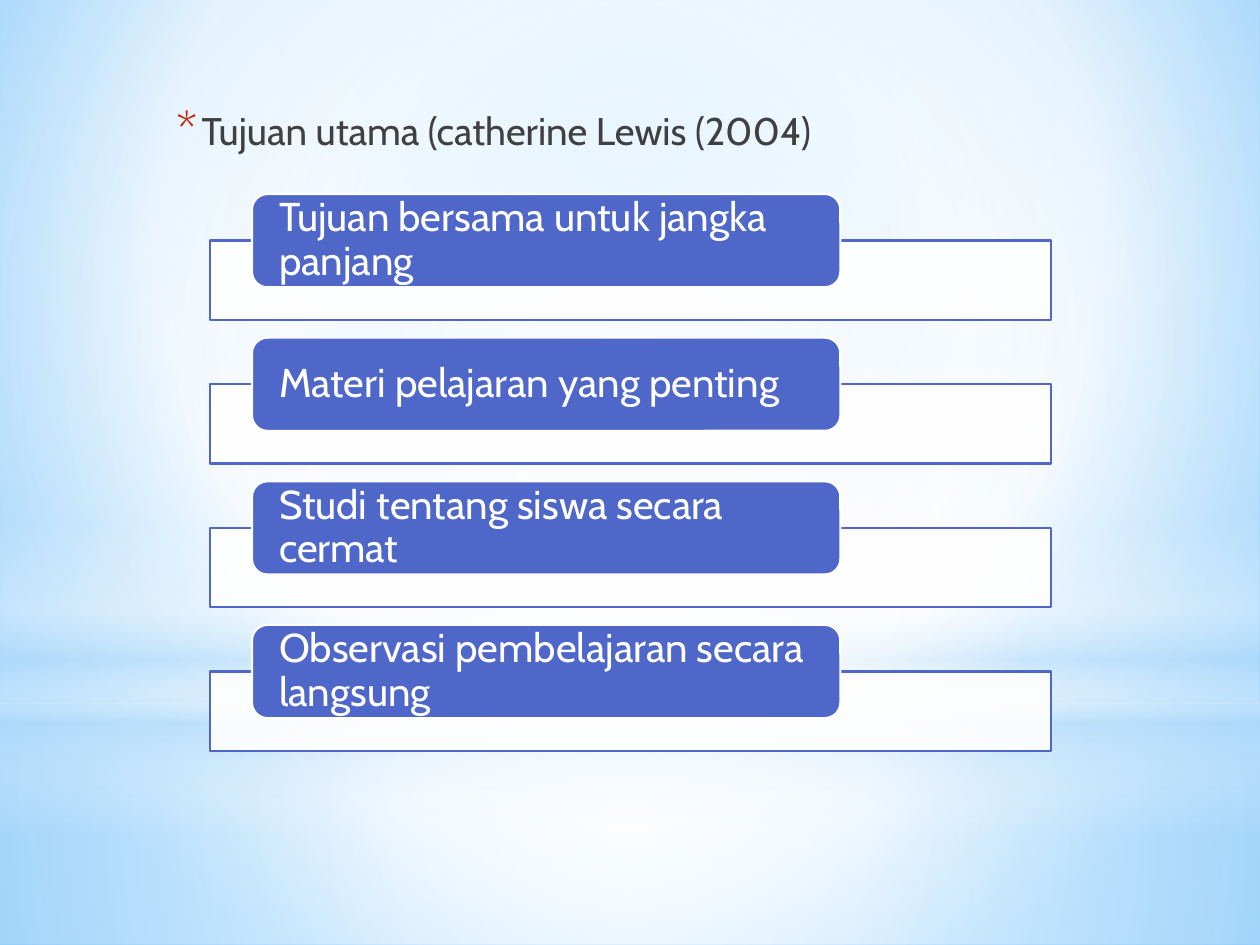
"""Build a slide that lists the main goals as four labelled bars."""
from lxml.etree import SubElement
from pptx import Presentation
from pptx.dml.color import RGBColor
from pptx.enum.shapes import MSO_SHAPE as SHAPE
from pptx.enum.text import MSO_ANCHOR as ANCHOR, MSO_AUTO_SIZE as AUTO, PP_ALIGN as ALIGN
from pptx.oxml.ns import qn
from pptx.util import Inches, Pt

HEADING = "Tujuan utama (catherine Lewis (2004)"
GOALS = [
    "Tujuan bersama untuk jangka panjang",
    "Materi pelajaran yang penting",
    "Studi tentang siswa secara cermat",
    "Observasi pembelajaran secara langsung",
]
THEME = dict(font="Cabin", heading="404040", bullet="C3260C", accent="4E67C8",
             white="FFFFFF", sky="B4DCFA", heading_size=22, goal_size=23, line=1.25)
WHITE, SKY = THEME["white"], THEME["sky"]
CENTER = (50, 50, 50, 50)
BACKDROP = [(0, "9ED5FF", 100), (60, WHITE, 100), (100, "5BB9FF", 100)]
BACKDROP_FOCUS = (20, 10, 20, 60)
GLOWS = [
    (SHAPE.RECTANGLE, (0, 5.58, 10, 1.92), CENTER,
     [(0, WHITE, 91), (37, WHITE, 76), (100, SKY, 79)]),
    (SHAPE.RECTANGLE, (0, 0, 10, 5.58), CENTER,
     [(0, WHITE, 89), (48, WHITE, 62), (100, SKY, 79)]),
    (SHAPE.RECTANGLE, (0, 4.12, 10, 2.5), None,
     [(0, WHITE, 0), (29, WHITE, 30), (45, SKY, 40), (55, WHITE, 26),
      (65, SKY, 60), (100, WHITE, 0)]),
    (SHAPE.OVAL, (0, 1.75, 10, 5.58), CENTER, [(0, WHITE, 100), (56, WHITE, 0)]),
]
HEADING_BOX = (1.25, 0.8, 7, 0.98)
BAR = (1.67, 1.91, 6.67, 0.63)
LABEL = (2, 1.54, 4.67, 0.74)
PITCH = 1.14


def add_xml(parent, tag, **attrs):
    return SubElement(parent, qn(tag), {k: str(v) for k, v in attrs.items()})


def set_gradient(fill, owner, stops, focus):
    fill.gradient()
    grad = owner.find(".//" + qn("a:gradFill"))
    grad.clear()
    grad.set("rotWithShape", "1")
    stop_list = add_xml(grad, "a:gsLst")
    for pos, color, alpha in stops:
        stop = add_xml(stop_list, "a:gs", pos=pos * 1000)
        clr = add_xml(stop, "a:srgbClr", val=color)
        if alpha < 100:
            add_xml(clr, "a:alpha", val=alpha * 1000)
    if focus:
        path = add_xml(grad, "a:path", path="circle")
        add_xml(path, "a:fillToRect", **{k: v * 1000 for k, v in zip("ltrb", focus)})
    else:
        add_xml(grad, "a:lin", ang=90 * 60000, scaled=0)


def add_box(s, kind, box, fill=None, line=None):
    sp = s.shapes.add_shape(kind, *map(Inches, box))
    sp.shadow.inherit = False
    if fill:
        sp.fill.solid()
        sp.fill.fore_color.rgb = RGBColor.from_string(fill)
    if line:
        sp.line.color.rgb = RGBColor.from_string(line)
        sp.line.width = Pt(THEME["line"])
    else:
        sp.line.fill.background()
    return sp


def write(tf, text, size, color):
    tf.text = text
    tf.word_wrap = True
    p = tf.paragraphs[0]
    p.alignment = ALIGN.LEFT
    font = p.runs[0].font
    font.name, font.size = THEME["font"], Pt(size)
    font.color.rgb = RGBColor.from_string(color)
    return p


def add_heading(s):
    body = s.placeholders[1]
    body.left, body.top, body.width, body.height = map(Inches, HEADING_BOX)
    s.shapes.element.append(body.element)
    body.text_frame.auto_size = AUTO.NONE
    p = write(body.text_frame, HEADING, THEME["heading_size"], THEME["heading"])
    p.space_before, p.space_after = Pt(4.4), Pt(3)
    pPr = p.runs[0].font and p.runs[0]._r.getparent().get_or_add_pPr()
    pPr.set("marL", str(Inches(0.25)))
    pPr.set("indent", str(Inches(-0.2)))
    add_xml(add_xml(pPr, "a:buClr"), "a:srgbClr", val=THEME["bullet"])
    add_xml(pPr, "a:buSzPct", val=130000)
    add_xml(pPr, "a:buFont", typeface=THEME["font"])
    add_xml(pPr, "a:buChar", char="*")


def add_goal(s, i, text):
    def place(box):
        left, top, width, height = box
        return left, top + i * PITCH, width, height

    bar = add_box(s, SHAPE.RECTANGLE, place(BAR), WHITE, THEME["accent"])
    clr = bar.element.spPr.find(qn("a:solidFill")).find(qn("a:srgbClr"))
    add_xml(clr, "a:alpha", val=90000)
    label = add_box(s, SHAPE.ROUNDED_RECTANGLE, place(LABEL), THEME["accent"], WHITE)
    tf = label.text_frame
    tf.vertical_anchor = ANCHOR.MIDDLE
    tf.margin_left = tf.margin_right = Inches(0.18)
    tf.margin_top = tf.margin_bottom = 0
    p = write(tf, text, THEME["goal_size"], WHITE)
    p.line_spacing, p.space_after = 0.9, Pt(8)


def main():
    prs = Presentation()
    prs.slide_width, prs.slide_height = Inches(10), Inches(7.5)
    s = prs.slides.add_slide(prs.slide_layouts[1])
    title = s.shapes.title.element
    title.getparent().remove(title)
    set_gradient(s.background.fill, s.element, BACKDROP, BACKDROP_FOCUS)
    for kind, box, focus, stops in GLOWS:
        sp = add_box(s, kind, box)
        set_gradient(sp.fill, sp.element, stops, focus)
    add_heading(s)
    for i, text in enumerate(GOALS):
        add_goal(s, i, text)
    prs.save("out.pptx")


if __name__ == "__main__":
    main()
